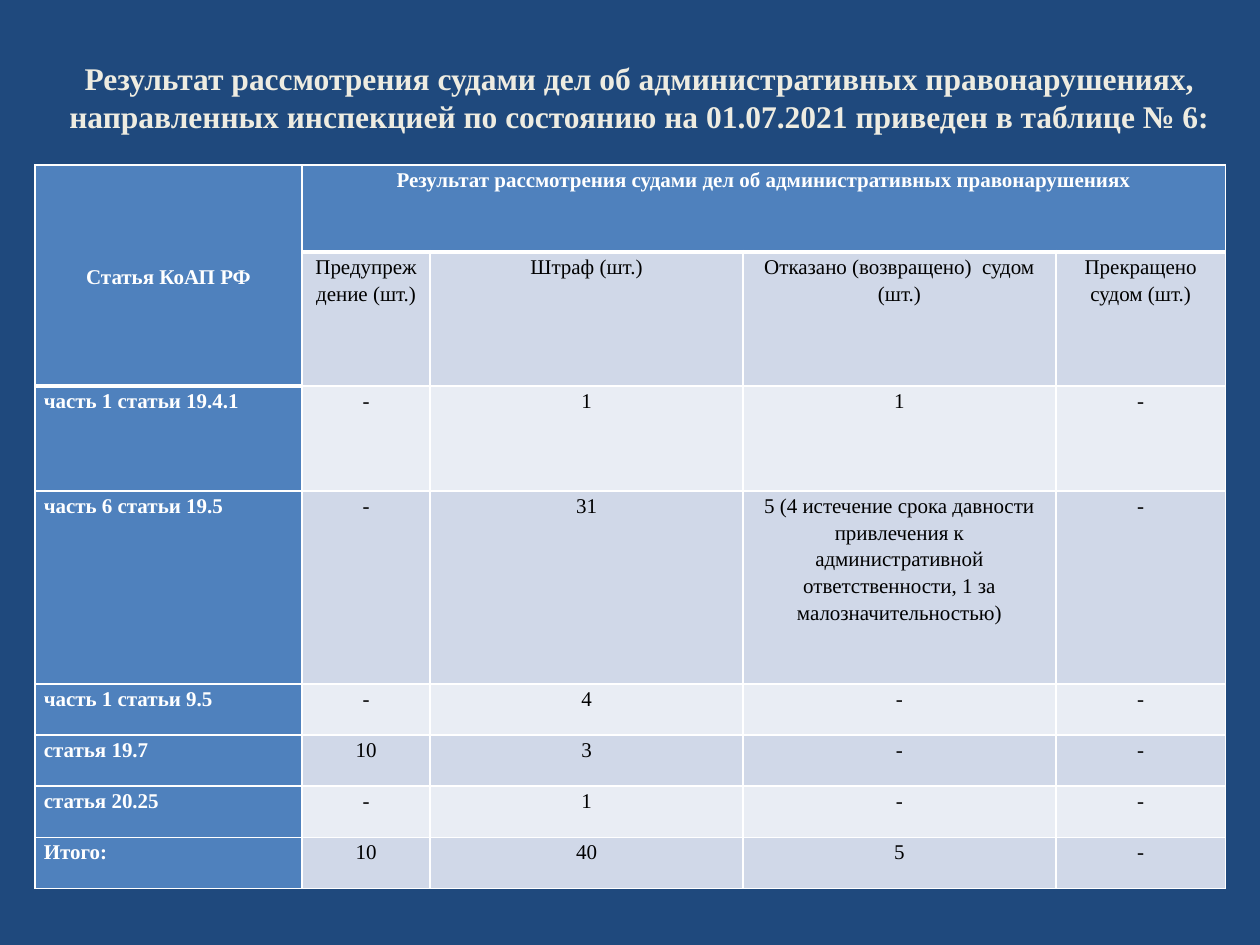
from dataclasses import dataclass
from lxml.etree import fromstring
from pptx import Presentation
from pptx.dml.color import RGBColor
from pptx.enum.text import MSO_ANCHOR, PP_ALIGN
from pptx.util import Pt

TITLE = ("Результат рассмотрения судами дел об административных правонарушениях, "
         "направленных инспекцией по состоянию на 01.07.2021 приведен в таблице № 6:")
ROWS = [
    ["Статья КоАП РФ",
     "Результат рассмотрения судами дел об административных правонарушениях", "", "", ""],
    ["", "Предупреждение (шт.)", "Штраф (шт.)", "Отказано (возвращено)  судом (шт.)",
     "Прекращено судом (шт.)"],
    ["часть 1 статьи 19.4.1", "-", "1", "1", "-"],
    ["часть 6 статьи 19.5", "-", "31",
     "5 (4 истечение срока давности привлечения к административной "
     "ответственности, 1 за малозначительностью)", "-"],
    ["часть 1 статьи 9.5", "-", "4", "-", "-"],
    ["статья 19.7", "10", "3", "-", "-"],
    ["статья 20.25", "-", "1", "-", "-"],
    ["Итого:", "10", "40", "5", "-"],
]
WIDTHS = [152.6, 73.2, 178.8, 178.8, 97]
HEIGHTS = [49.8, 76.4, 60.2, 110.2] + [29.2] * 4


@dataclass(frozen=True)
class Theme:
    font: str = "Times New Roman"
    back: str = "1F497D"
    title: str = "EEECE1"
    head: str = "4F81BD"
    bands: tuple = ("E9EDF4", "D0D8E8")
    light: str = "FFFFFF"
    dark: str = "000000"
    big: int = 18
    small: int = 12


LOOK = Theme()
NS = "http://schemas.openxmlformats.org/drawingml/2006/main"


def write(frame, text, size, color, bold, align):
    frame.word_wrap = True
    para = frame.paragraphs[0]
    para.text = text
    para.alignment = align
    font = para.font
    font.name, font.size, font.bold = LOOK.font, Pt(size), bold
    font.color.rgb = RGBColor.from_string(color)
    return para


def edge(cell, sides):
    props = cell._tc.get_or_add_tcPr()
    for spot, (side, width) in enumerate(sides.items()):
        props.insert(spot, fromstring(
            f'<a:ln{side} xmlns:a="{NS}" w="{Pt(width)}"><a:solidFill>'
            f'<a:srgbClr val="{LOOK.light}"/></a:solidFill></a:ln{side}>'))


def style(cell, text, row, col):
    head = row == 0 or col == 0
    cell.margin_left = cell.margin_right = Pt(5)
    cell.margin_top = cell.margin_bottom = Pt(0)
    cell.fill.solid()
    cell.fill.fore_color.rgb = RGBColor.from_string(
        LOOK.head if head else LOOK.bands[row % 2])
    last = 1 if col == 0 else 0
    edge(cell, {"L": 1, "R": 1, "T": 3 if row == last + 1 else 1,
                "B": 3 if row <= last else 1})
    align = PP_ALIGN.JUSTIFY if col == 0 and row > 1 else PP_ALIGN.CENTER
    if text:
        para = write(cell.text_frame, text, LOOK.small,
                     LOOK.light if head else LOOK.dark, head, align)
        para.line_spacing = 1.15


def main():
    deck = Presentation()
    deck.slide_width, deck.slide_height = Pt(720), Pt(540)
    slide = deck.slides.add_slide(deck.slide_layouts[6])
    slide.background.fill.solid()
    slide.background.fill.fore_color.rgb = RGBColor.from_string(LOOK.back)

    frame = slide.shapes.add_textbox(Pt(36.7), Pt(26), Pt(657.4), Pt(51)).text_frame
    frame.margin_left = frame.margin_right = frame.margin_bottom = Pt(0)
    frame.margin_top = Pt(3.6)
    frame.vertical_anchor = MSO_ANCHOR.BOTTOM
    write(frame, TITLE, LOOK.big, LOOK.title, True, PP_ALIGN.CENTER)

    table = slide.shapes.add_table(len(ROWS), len(WIDTHS), Pt(20), Pt(94.3),
                                   Pt(sum(WIDTHS)), Pt(sum(HEIGHTS))).table
    table.first_row = table.horz_banding = False
    for col, width in zip(table.columns, WIDTHS):
        col.width = Pt(width)
    for row, height in zip(table.rows, HEIGHTS):
        row.height = Pt(height)
    for row, texts in enumerate(ROWS):
        for col, text in enumerate(texts):
            style(table.cell(row, col), text, row, col)
    table.cell(0, 0).merge(table.cell(1, 0))
    table.cell(0, 1).merge(table.cell(0, 4))
    table.cell(0, 0).vertical_anchor = MSO_ANCHOR.MIDDLE
    deck.save("out.pptx")


if __name__ == "__main__":
    main()
